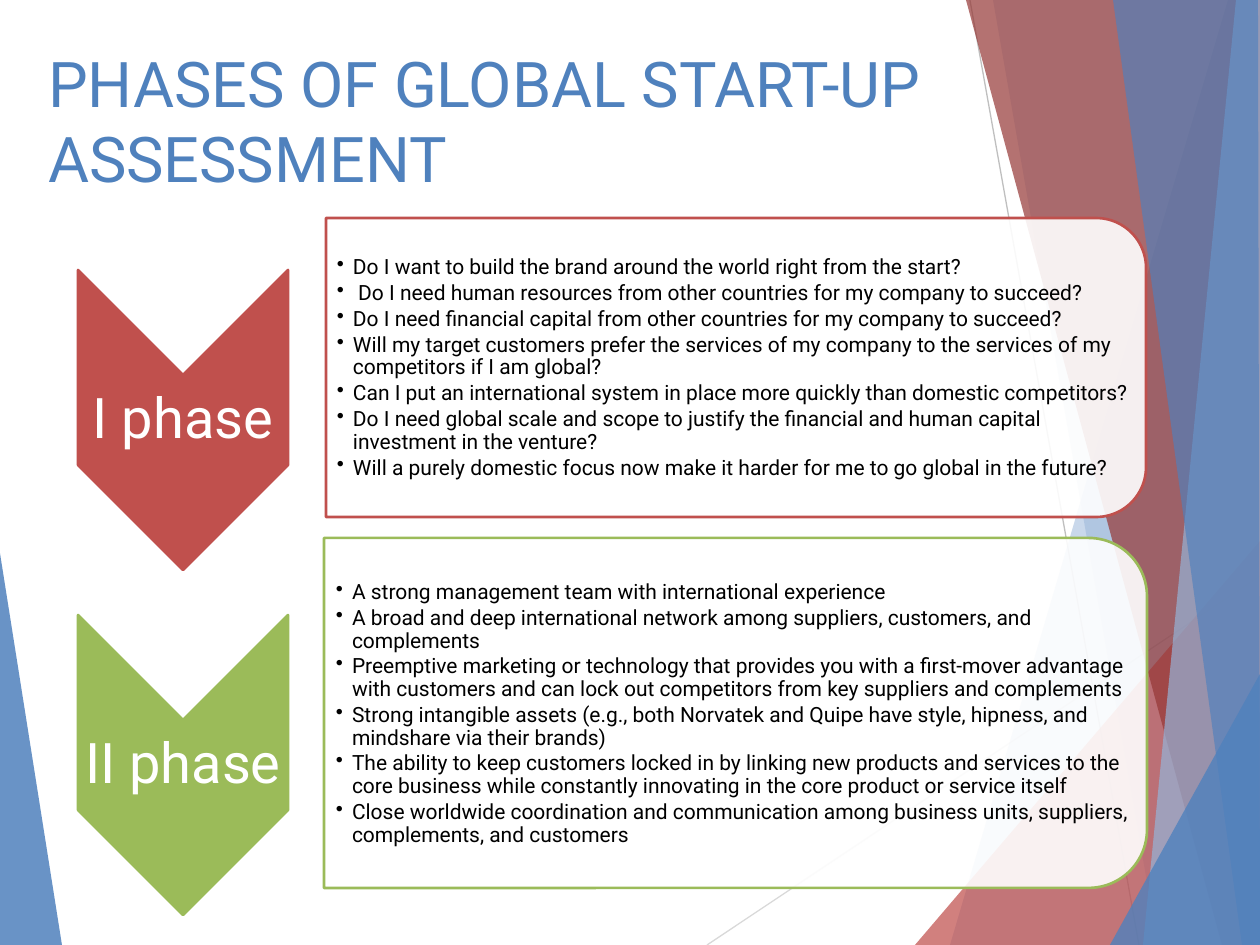
from lxml.etree import SubElement
from pptx import Presentation
from pptx.dml.color import RGBColor
from pptx.enum.shapes import MSO_CONNECTOR, MSO_SHAPE
from pptx.enum.text import MSO_ANCHOR, MSO_AUTO_SIZE, PP_ALIGN
from pptx.oxml.ns import qn
from pptx.util import Emu, Pt

SLIDE_WIDTH, SLIDE_HEIGHT = 1260, 945
SCALE = 914400 / 126
FONT = "Roboto"

BLUE = RGBColor(0x4F, 0x81, 0xBD)
LIGHT_BLUE = RGBColor(0x95, 0xB3, 0xD7)
RED = RGBColor(0xC0, 0x50, 0x4D)
DARK_RED = RGBColor(0x95, 0x37, 0x35)
GREEN = RGBColor(0x9B, 0xBB, 0x59)
PALE_GRAY = RGBColor(0xD9, 0xD9, 0xD9)
GRAY = RGBColor(0xBF, 0xBF, 0xBF)
WHITE = RGBColor(0xFF, 0xFF, 0xFF)
BLACK = RGBColor(0x00, 0x00, 0x00)

LEFT_WEDGE = ([(0, 553), (62, 945), (0, 945)], BLUE, 85)
BACKGROUND_LINES = [
    ((707, 945), (1260, 576), PALE_GRAY),
    ((970, 0), (1139, 945), GRAY),
]
RIGHT_FACETS = [
    ([(1228, 0), (950, 945), (1260, 945), (1260, 0)], BLUE, 30),
    ([(993, 0), (1158, 945), (1260, 945), (1260, 0)], BLUE, 20),
    ([(915, 945), (1260, 541), (1260, 945)], RED, 72),
    ([(966, 0), (1222, 945), (1260, 945), (1260, 0)], DARK_RED, 70),
    ([(1236, 0), (1143, 945), (1260, 945), (1260, 0)], LIGHT_BLUE, 70),
    ([(1113, 0), (1242, 945), (1260, 945), (1258, 0)], BLUE, 65),
    ([(1110, 945), (1260, 674), (1260, 945)], BLUE, 80),
]

# name, colour, chevron middle, panel box, text box, questions or conditions
PHASES = [
    ("I phase", RED, 420, (326, 218, 820, 299), (326, 233, 805, 270), [
        "Do I want to build the brand around the world right from the start?",
        " Do I need human resources from other countries for my company to succeed?",
        "Do I need financial capital from other countries for my company to succeed?",
        "Will my target customers prefer the services of my company to the services "
        "of my competitors if I am global?",
        "Can I put an international system in place more quickly than domestic competitors?",
        "Do I need global scale and scope to justify the financial and human capital "
        "investment in the venture?",
        "Will a purely domestic focus now make it harder for me to go global in the future?",
    ]),
    ("II phase", GREEN, 765, (324, 538, 823, 350), (325, 556, 805, 316), [
        "A strong management team with international experience",
        "A broad and deep international network among suppliers, customers, and complements",
        "Preemptive marketing or technology that provides you with a first-mover advantage "
        "with customers and can lock out competitors from key suppliers and complements",
        "Strong intangible assets (e.g., both Norvatek and Quipe have style, hipness, and "
        "mindshare via their brands)",
        "The ability to keep customers locked in by linking new products and services to "
        "the core business while constantly innovating in the core product or service itself",
        "Close worldwide coordination and communication among business units, suppliers, "
        "complements, and customers",
    ]),
]


def px(length):
    return Emu(round(length * SCALE))


class SlideBuilder:
    def __init__(self, slide):
        self.slide = slide
        self.shapes = slide.shapes

    def paint(self, shape, color, opacity=100, line_color=None):
        shape.shadow.inherit = False
        shape.fill.solid()
        shape.fill.fore_color.rgb = color
        if opacity < 100:
            color_element = shape.fill._xPr.find(qn("a:solidFill"))[0]
            SubElement(color_element, qn("a:alpha"), val=str(opacity * 1000))
        if line_color is None:
            shape.line.fill.background()
        else:
            shape.line.color.rgb = line_color
            shape.line.width = Pt(1.5)

    def facet(self, points, color, opacity):
        builder = self.shapes.build_freeform(*points[0], scale=SCALE)
        builder.add_line_segments(points[1:], close=True)
        self.paint(builder.convert_to_shape(), color, opacity)

    def line(self, start, end, color):
        connector = self.shapes.add_connector(
            MSO_CONNECTOR.STRAIGHT, *map(px, start + end))
        connector.line.color.rgb = color
        connector.line.width = Pt(0.75)
        SubElement(connector._element.spPr, qn("a:effectLst"))

    def turned_shape(self, kind, box, color, opacity, line_color):
        """Add a preset turned by 90 degrees so that it fills the visible box."""
        left, top, width, height = box
        shift = (width - height) / 2
        shape = self.shapes.add_shape(
            kind, px(left + shift), px(top - shift), px(height), px(width))
        shape.rotation = 90
        self.paint(shape, color, opacity, line_color)

    def add_run(self, paragraph, text, size, color):
        run = paragraph.add_run()
        run.text = text
        run.font.name = FONT
        run.font.size = Pt(size)
        run.font.color.rgb = color

    def set_frame(self, frame, insets, anchor):
        frame.word_wrap = True
        frame.auto_size = MSO_AUTO_SIZE.NONE
        frame.vertical_anchor = anchor
        (frame.margin_left, frame.margin_top,
         frame.margin_right, frame.margin_bottom) = map(px, insets)

    def title(self, text, box):
        title = self.shapes.title
        title.left, title.top, title.width, title.height = map(px, box)
        self.set_frame(title.text_frame, (13, 10, 13, 6), MSO_ANCHOR.TOP)
        paragraph = title.text_frame.paragraphs[0]
        paragraph.alignment = PP_ALIGN.LEFT
        self.add_run(paragraph, text, 36, BLUE)

    def label(self, text, box):
        frame = self.shapes.add_textbox(*map(px, box)).text_frame
        self.set_frame(frame, (3, 3, 3, 3), MSO_ANCHOR.MIDDLE)
        paragraph = frame.paragraphs[0]
        paragraph.alignment = PP_ALIGN.CENTER
        paragraph.line_spacing = 0.9
        self.add_run(paragraph, text, 32, WHITE)

    def bullets(self, items, box):
        frame = self.shapes.add_textbox(*map(px, box)).text_frame
        self.set_frame(frame, (11, 1, 1, 1), MSO_ANCHOR.MIDDLE)
        for index, item in enumerate(items):
            paragraph = frame.add_paragraph() if index else frame.paragraphs[0]
            paragraph.line_spacing = 0.9
            paragraph.space_after = Pt(1.8)
            properties = paragraph._p.get_or_add_pPr()
            properties.set("marL", str(px(16)))
            properties.set("indent", str(px(-16)))
            SubElement(properties, qn("a:buChar"), char="•")
            self.add_run(paragraph, item, 12, BLACK)

    def phase(self, name, color, middle, panel_box, text_box, items):
        chevron_box = (78, middle - 150, 210, 300)
        self.turned_shape(MSO_SHAPE.CHEVRON, chevron_box, color, 100, color)
        self.label(name, (78, middle - 45, 210, 90))
        self.turned_shape(
            MSO_SHAPE.ROUND_2_SAME_RECTANGLE, panel_box, WHITE, 90, color)
        self.bullets(items, text_box)


def main():
    presentation = Presentation()
    presentation.slide_width = px(SLIDE_WIDTH)
    presentation.slide_height = px(SLIDE_HEIGHT)
    builder = SlideBuilder(
        presentation.slides.add_slide(presentation.slide_layouts[5]))

    builder.facet(*LEFT_WEDGE)
    for line in BACKGROUND_LINES:
        builder.line(*line)
    for facet in RIGHT_FACETS:
        builder.facet(*facet)
    builder.title("PHASES OF GLOBAL START-UP ASSESSMENT", (35, 34, 1181, 181))
    for phase in PHASES:
        builder.phase(*phase)

    presentation.save("out.pptx")


if __name__ == "__main__":
    main()
